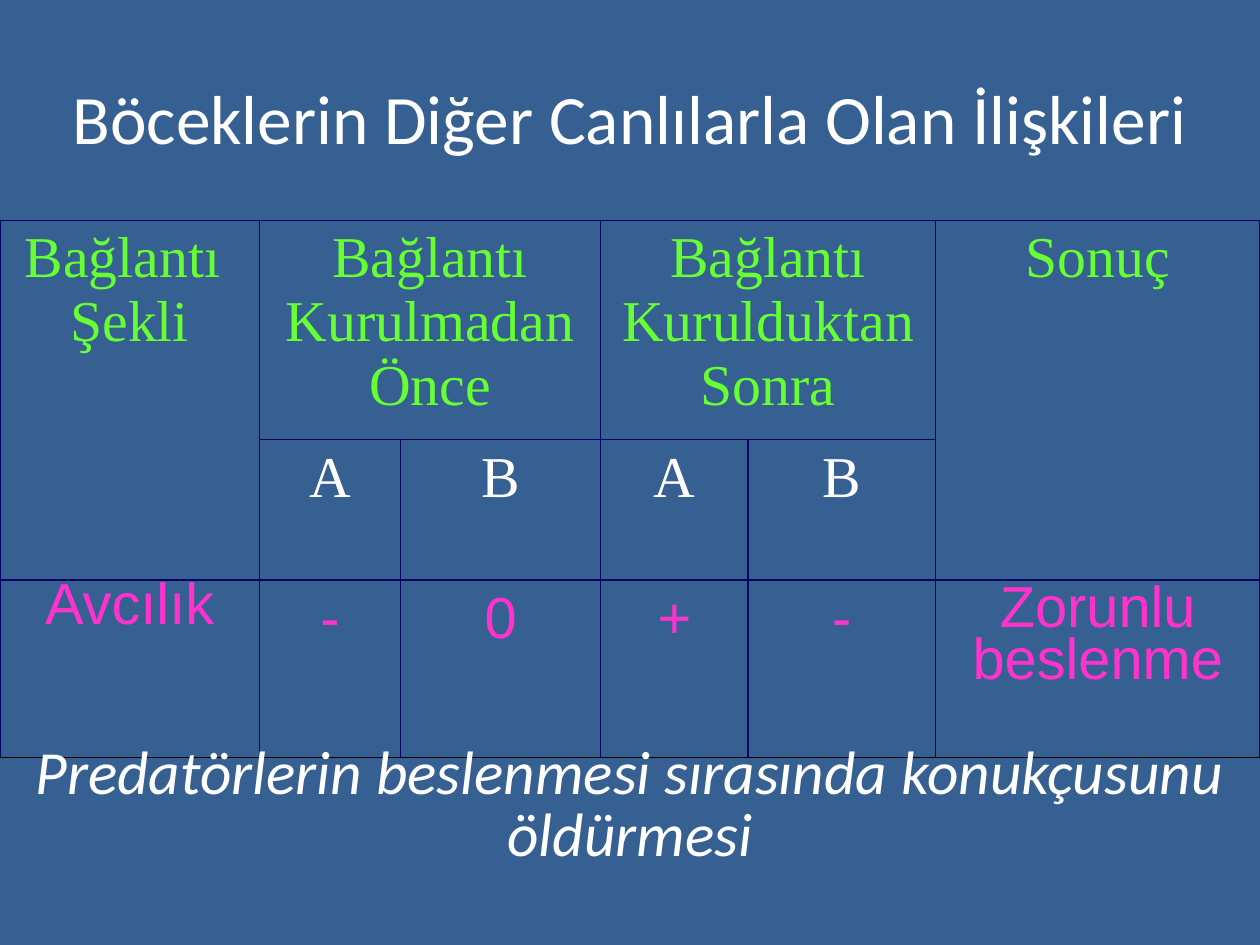
from dataclasses import dataclass

from lxml.etree import SubElement
from pptx import Presentation
from pptx.dml.color import RGBColor
from pptx.enum.text import MSO_ANCHOR, MSO_AUTO_SIZE, PP_ALIGN
from pptx.oxml.ns import qn
from pptx.util import Cm, Pt

WHITE, GREEN, PINK = "FFFFFF", "66FF33", "FF33CC"
NAVY, BLACK, BLUE = "000066", "000000", "376092"
SERIF, SANS, BODY = "Times New Roman", "Arial", "Calibri"
COLUMN_WIDTHS = (5.23, 2.84, 4.04, 2.97, 3.78, 6.54)
ROW_HEIGHTS = (4.42, 2.82, 3.58)


@dataclass
class Entry:
    row: int
    column: int
    text: str
    color: str
    font: str = SERIF
    rows: int = 1
    columns: int = 1
    line_spacing: float = 1.0
    space_before: float = 0


ENTRIES = [
    Entry(0, 0, "Bağlantı \nŞekli", GREEN, rows=2),
    Entry(0, 1, "Bağlantı Kurulmadan Önce", GREEN, columns=2),
    Entry(0, 3, "Bağlantı Kurulduktan Sonra", GREEN, columns=2),
    Entry(0, 5, "Sonuç", GREEN, rows=2),
    *(Entry(1, i, party, WHITE) for i, party in enumerate("ABAB", 1)),
    Entry(2, 0, "Avcılık", PINK, SANS, line_spacing=0.75),
    *(Entry(2, i, effect, PINK, SANS, space_before=6.6)
      for i, effect in enumerate("-0+-", 1)),
    Entry(2, 5, "Zorunlu beslenme", PINK, SANS, line_spacing=0.8),
]


def rgb(value: str) -> RGBColor:
    return RGBColor.from_string(value)


def format_text(frame, font: str, size: float, color: str,
                italic: bool = False, line_spacing: float = 1.0,
                space_before: float = 0) -> None:
    for paragraph in frame.paragraphs:
        paragraph.alignment = PP_ALIGN.CENTER
        paragraph.line_spacing = line_spacing
        paragraph.space_before = Pt(space_before)
        for run in paragraph.runs:
            run.font.name = font
            run.font.size = Pt(size)
            run.font.italic = italic
            run.font.color.rgb = rgb(color)


def draw_borders(cell, bottom: str) -> None:
    properties = cell._tc.get_or_add_tcPr()
    sides = {"lnL": NAVY, "lnR": NAVY, "lnT": NAVY, "lnB": bottom}
    for position, (side, color) in enumerate(sides.items()):
        line = SubElement(properties, qn(f"a:{side}"), w=str(Pt(1)))
        fill = SubElement(line, qn("a:solidFill"))
        SubElement(fill, qn("a:srgbClr"), val=color)
        properties.insert(position, line)


def draw_relations(slide) -> None:
    relations = slide.shapes.add_table(
        len(ROW_HEIGHTS), len(COLUMN_WIDTHS), Cm(0), Cm(4.44),
        Cm(sum(COLUMN_WIDTHS)), Cm(sum(ROW_HEIGHTS))).table
    for column, width in zip(relations.columns, COLUMN_WIDTHS):
        column.width = Cm(width)
    for row, height in zip(relations.rows, ROW_HEIGHTS):
        row.height = Cm(height)
        for cell in row.cells:
            cell.fill.background()
            draw_borders(cell, BLACK if row is last_row(relations, row) else NAVY)
    for entry in ENTRIES:
        cell = relations.cell(entry.row, entry.column)
        if entry.rows > 1 or entry.columns > 1:
            cell.merge(relations.cell(entry.row + entry.rows - 1,
                                      entry.column + entry.columns - 1))
        cell.text_frame.text = entry.text
        format_text(cell.text_frame, entry.font, 33, entry.color,
                    line_spacing=entry.line_spacing,
                    space_before=entry.space_before)


def last_row(table, row):
    """Return the row itself when it closes the table."""
    return row if row._tr is table._tbl.tr_lst[-1] else None


def main() -> None:
    presentation = Presentation()
    presentation.slide_width, presentation.slide_height = Cm(25.4), Cm(19.05)
    slide = presentation.slides.add_slide(presentation.slide_layouts[5])
    slide.background.fill.solid()
    slide.background.fill.fore_color.rgb = rgb(BLUE)

    # Heading
    heading = slide.shapes.title
    heading.left, heading.top = Cm(0), Cm(0.76)
    heading.width, heading.height = Cm(25.4), Cm(3.18)
    heading.text_frame.text = "Böceklerin Diğer Canlılarla Olan İlişkileri"
    heading.text_frame.auto_size = MSO_AUTO_SIZE.NONE
    heading.text_frame.vertical_anchor = MSO_ANCHOR.MIDDLE
    format_text(heading.text_frame, BODY, 39.6, WHITE)

    # Relations before and after contact
    draw_relations(slide)

    # Definition of predation
    definition = slide.shapes.add_textbox(Cm(0), Cm(14.88), Cm(25.4), Cm(2.77))
    definition.text_frame.word_wrap = True
    definition.text_frame.auto_size = MSO_AUTO_SIZE.SHAPE_TO_FIT_TEXT
    definition.text_frame.text = (
        "Predatörlerin beslenmesi sırasında konukçusunu öldürmesi")
    format_text(definition.text_frame, BODY, 35, WHITE, italic=True,
                line_spacing=0.85)

    presentation.save("out.pptx")


if __name__ == "__main__":
    main()
